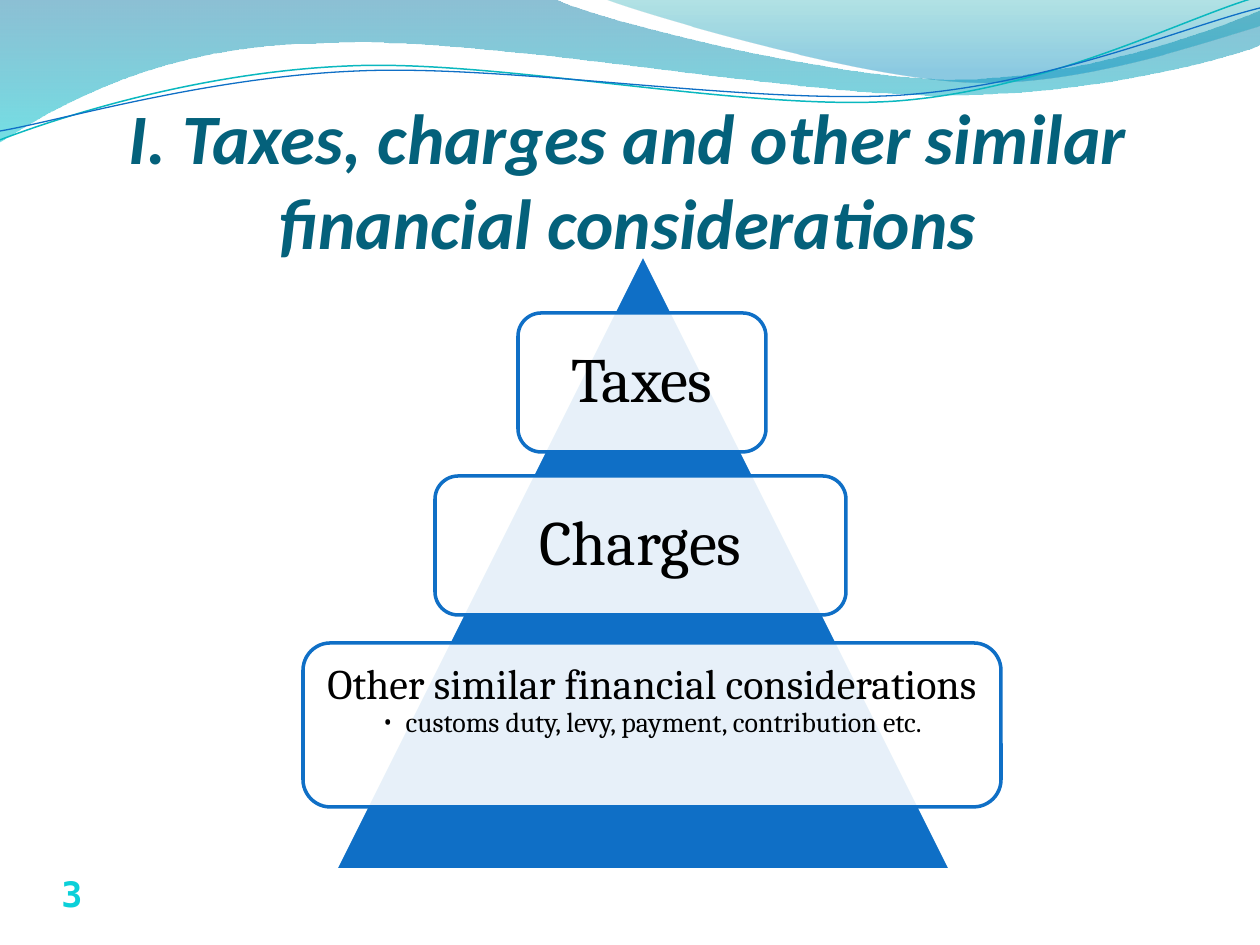
from math import cos, radians, sin

from lxml.etree import SubElement
from pptx import Presentation
from pptx.dml.color import RGBColor
from pptx.enum.shapes import MSO_SHAPE
from pptx.enum.text import MSO_ANCHOR, PP_ALIGN
from pptx.oxml.ns import qn
from pptx.util import Pt

PX = 914400 / 126
W, H = 1260, 945
COLORS = {
    "title": "04617B", "blue": "0F6FC6", "teal": "0AB8BF", "number": "0BD0D9",
    "white": "FFFFFF", "black": "000000",
    "wave_top": "0074A1", "wave_bottom": "00C6CF",
    "crest_top": "00A1A9", "crest_bottom": "008BBF",
}
STRAND_TILT = -2.7


def px(n):
    return round(n * PX)


def rgb(name):
    return RGBColor.from_string(COLORS[name])


def set_alpha(color_parent, percent):
    """Give every colour inside the element the same opacity."""
    for clr in color_parent.iter(qn("a:srgbClr")):
        SubElement(clr, qn("a:alpha"), val=str(percent * 1000))


def set_line(sp, color, width):
    sp.line.color.rgb = rgb(color)
    sp.line.width = Pt(width)


def add_run(p, text, size, font, color, bold=None, italic=None):
    r = p.add_run()
    r.text = text
    r.font.size, r.font.name = Pt(size), font
    r.font.bold, r.font.italic = bold, italic
    r.font.color.rgb = rgb(color)


def set_margins(tf, left, top, right, bottom):
    tf.margin_left, tf.margin_top = px(left), px(top)
    tf.margin_right, tf.margin_bottom = px(right), px(bottom)


def add_textbox(s, box):
    tf = s.shapes.add_textbox(*map(px, box)).text_frame
    tf.word_wrap = True
    return tf


def rotate(point, center, degrees):
    a = radians(degrees)
    dx, dy = point[0] - center[0], point[1] - center[1]
    return (center[0] + dx * cos(a) - dy * sin(a),
            center[1] + dx * sin(a) + dy * cos(a))


def add_curve(s, box, segments, close, tilt=0, center=(0, 0)):
    """Outline from 2-number points and 6-number cubic curves."""
    points = [(seg[i], seg[i + 1]) for seg in segments
              for i in range(0, len(seg), 2)]
    points = [rotate(point, center, -tilt) for point in points]
    points = [(px(box[0] + x), px(box[1] + y)) for x, y in points]
    builder = s.shapes.build_freeform(*points[0], scale=1.0)
    builder.add_line_segments(points[1:], close=close)
    sp = builder.convert_to_shape()
    sp.shadow.inherit = False
    sp.rotation = tilt
    # Merge the three lines of each cubic segment into one curve.
    lines = iter(list(sp.element.iter(qn("a:lnTo"))))
    for seg in segments[1:]:
        line = next(lines)
        if len(seg) == 6:
            line.tag = qn("a:cubicBezTo")
            for other in (next(lines), next(lines)):
                line.append(other[0])
                other.getparent().remove(other)
    return sp


def add_wave(s, box, segments, stops):
    """Filled wave; stops are (position, colour, opacity percent)."""
    sp = add_curve(s, box, segments, True)
    sp.line.fill.background()
    sp.fill.gradient()
    sp.fill.gradient_angle = 270
    for stop, (position, color, _) in zip(sp.fill.gradient_stops, stops):
        stop.position = position
        stop.color.rgb = rgb(color)
    for gs, (_, _, opacity) in zip(sp.element.iter(qn("a:gs")), stops):
        set_alpha(gs, opacity)


def add_header(s, box):
    add_wave(s, box, [
        (0, -1), (554, -1), (600, 21, 837, 79, 955, 79),
        (1075, 79, 1207, 33, 1260, 11), (1261, 45),
        (1239, 55, 1096, 96, 940, 95), (784, 95, 481, 35, 324, 43),
        (163, 44, 58, 105, -1, 142),
    ], [(0, "wave_top", 45), (1, "wave_bottom", 55)])
    add_wave(s, box, [
        (604, -1), (641, 14, 859, 78, 969, 82),
        (1079, 87, 1211, 40, 1260, 26), (1260, 0),
    ], [(0, "crest_top", 30), (0.8, "crest_bottom", 45)])
    strands = [
        ("teal", 0.85, (629, 72), [
            (0, 140), (60, 117, 199, 72, 349, 66),
            (498, 59, 747, 112, 898, 101), (1050, 89, 1182, 19, 1257, -3)]),
        ("blue", 0.75, (629, 74), [
            (0, 131), (59, 121, 207, 77, 357, 71),
            (508, 64, 752, 105, 903, 95), (1053, 84, 1186, 26, 1260, 8)]),
    ]
    for color, width, center, segments in strands:
        sp = add_curve(s, box, segments, False, STRAND_TILT, center)
        sp.fill.background()
        set_line(sp, color, width)


def add_title(s, box, text):
    tf = add_textbox(s, box)
    tf.vertical_anchor = MSO_ANCHOR.BOTTOM
    set_margins(tf, 0, 6, 0, 0)
    p = tf.paragraphs[0]
    p.alignment = PP_ALIGN.CENTER
    add_run(p, text, 40.5, "Calibri", "title", bold=True, italic=True)


def add_page_number(s, box, text):
    add_run(add_textbox(s, box).paragraphs[0], text, 20, "DejaVu Sans Mono",
            "number", bold=True)


def add_bullet(p):
    p.level = 1
    pPr = p._p.get_or_add_pPr()
    pPr.set("marL", str(px(24)))
    pPr.set("indent", str(-px(24)))
    SubElement(pPr, qn("a:buFont"), typeface="Cambria")
    SubElement(pPr, qn("a:buChar"), char="•")


def add_level(s, box, inset, anchor, margin, lines):
    """Translucent rounded box with inset text; lines are (text, size, bulleted)."""
    left, top, width, height = box
    sp = s.shapes.add_shape(MSO_SHAPE.ROUNDED_RECTANGLE, *map(px, box))
    sp.shadow.inherit = False
    sp.fill.solid()
    sp.fill.fore_color.rgb = rgb("white")
    set_alpha(sp.element.spPr.find(qn("a:solidFill")), 90)
    set_line(sp, "blue", 2)
    tf = add_textbox(s, (left + inset, top + inset,
                         width - 2 * inset, height - 2 * inset))
    tf.vertical_anchor = anchor
    set_margins(tf, margin, margin, margin, margin)
    for i, (text, size, bulleted) in enumerate(lines):
        p = tf.add_paragraph() if i else tf.paragraphs[0]
        p.alignment = PP_ALIGN.CENTER
        p.line_spacing = 0.9
        if bulleted:
            add_bullet(p)
        add_run(p, text, size, "Cambria", "black")


def add_pyramid(s, box):
    left, top = box[:2]
    sp = s.shapes.add_shape(MSO_SHAPE.ISOSCELES_TRIANGLE, *map(px, box))
    sp.shadow.inherit = False
    sp.fill.solid()
    sp.fill.fore_color.rgb = rgb("blue")
    set_line(sp, "white", 2)
    levels = [
        ((183, 59, 248, 139), 7, MSO_ANCHOR.MIDDLE, 19,
         [("Taxes", 36, False)]),
        ((100, 222, 411, 139), 7, MSO_ANCHOR.MIDDLE, 19,
         [("Charges", 36, False)]),
        ((-32, 389, 698, 164), 8, MSO_ANCHOR.TOP, 12, [
            ("Other similar financial considerations", 24, False),
            ("customs duty, levy, payment, contribution etc.", 16, True)]),
    ]
    for (x, y, w, h), *content in levels:
        add_level(s, (left + x, top + y, w, h), *content)


def main():
    prs = Presentation()
    prs.slide_width, prs.slide_height = px(W), px(H)
    s = prs.slides.add_slide(prs.slide_layouts[6])
    add_header(s, (0, 0, W, 142))
    add_title(s, (61, 156, 1134, 108),
              "I. Taxes, charges and other similar financial considerations")
    add_page_number(s, (49, 866, 186, 55), "3")
    add_pyramid(s, (335, 254, 616, 616))
    prs.save("out.pptx")


if __name__ == "__main__":
    main()
